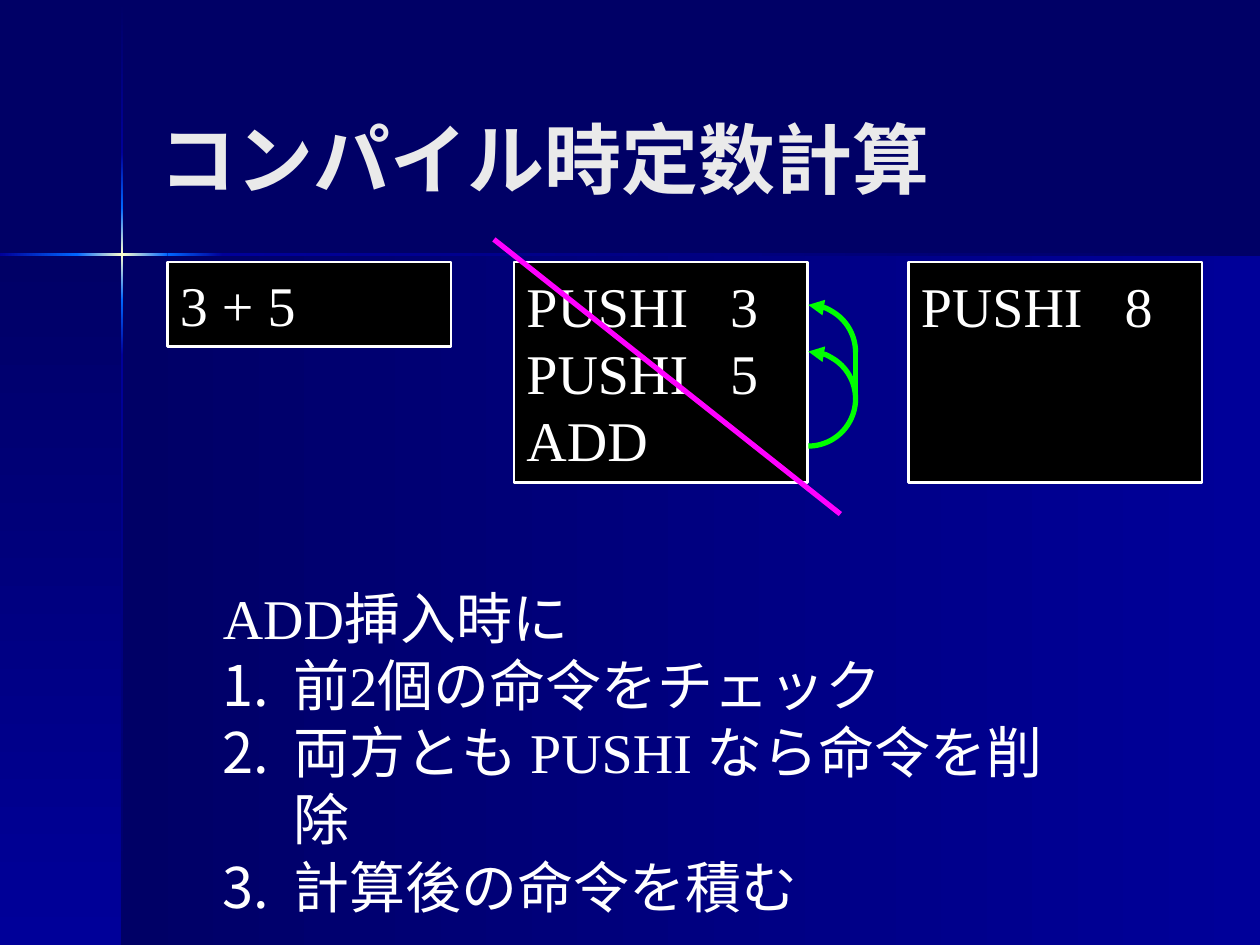
from lxml import etree
from pptx import Presentation
from pptx.dml.color import RGBColor
from pptx.enum.shapes import MSO_CONNECTOR, MSO_SHAPE
from pptx.enum.text import MSO_ANCHOR
from pptx.oxml import parse_xml
from pptx.oxml.ns import nsdecls, qn
from pptx.util import Inches, Pt

RECT, ARC = MSO_SHAPE.RECTANGLE, MSO_SHAPE.ARC
STRAIGHT = MSO_CONNECTOR.STRAIGHT
TOP, MIDDLE, BOTTOM = MSO_ANCHOR.TOP, MSO_ANCHOR.MIDDLE, MSO_ANCHOR.BOTTOM
FONT = "Times New Roman"
NAVY, BLUE, BRIGHT, CREAM = "000066", "000099", "0066FF", "FFFFCC"
WHITE, BLACK, GREEN, MAGENTA = "FFFFFF", "000000", "00FF00", "FF00FF"

# Content
TITLE = "コンパイル時定数計算"
CODE_BOXES = [  # left, width, height, lines
    (1.33, 2.25, 0.67, ["3 + 5"]),
    (4.08, 2.33, 1.75, ["PUSHI   3", "PUSHI   5", "ADD"]),
    (7.21, 2.33, 1.75, ["PUSHI   8", "", ""]),
]
CODE_TOP = 2.08
INTRO = "ADD挿入時に"
STEPS = ["前2個の命令をチェック", "両方とも PUSHI なら命令を削除", "計算後の命令を積む"]
PANELS = [  # left, top, width, height, angle
    (0.97, 2.02, 9.03, 5.48, 0),
    (0, 2.02, 0.97, 5.48, 90),
]
# Glowing cross: edges along each bar and the colours between them
BAR_X, BAR_Y, BAR = 0.96, 2.01, 0.02
V_EDGES = [0.01, 1.21, 1.65, 2.38, 2.82, 7.5]
V_COLORS = [(NAVY, BLUE), (BLUE, BRIGHT), (BRIGHT, CREAM, BRIGHT), (BRIGHT, BLUE), (BLUE, NAVY)]
H_EDGES = [0, 0.61, 1.33, 1.77, 10]
H_COLORS = [(BLUE, BRIGHT), (BRIGHT, CREAM, BRIGHT), (BRIGHT, BLUE), (BLUE, NAVY)]
ARCS = [(2.42, 0, True), (2.79, 0, True), (2.79, 90, False)]  # top, rotation, arrow
ARC_LEFT, ARC_SIZE = 6.04, 0.75


def rgb(value):
    return RGBColor.from_string(value)


def add_shape(kind, x, y, w, h):
    sp = s.shapes.add_shape(kind, Inches(x), Inches(y), Inches(w), Inches(h))
    sp.shadow.inherit = False
    return sp


def set_line(sp, color, width):
    sp.line.color.rgb = rgb(color)
    sp.line.width = Pt(width)


def gradient_rect(x, y, w, h, colors, angle):
    sp = add_shape(RECT, x, y, w, h)
    sp.line.fill.background()
    step = 100000 // (len(colors) - 1)
    stops = "".join(f'<a:gs pos="{i * step}"><a:srgbClr val="{c}"/></a:gs>'
                    for i, c in enumerate(colors))
    grad = parse_xml(f'<a:gradFill {nsdecls("a")}><a:gsLst>{stops}</a:gsLst>'
                     f'<a:lin ang="{angle * 60000}" scaled="0"/></a:gradFill>')
    sp._element.spPr.find(qn("a:prstGeom")).addnext(grad)


def add_line(x1, y1, x2, y2, color):
    cn = s.shapes.add_connector(STRAIGHT, Inches(x1), Inches(y1), Inches(x2), Inches(y2))
    set_line(cn, color, 3)
    etree.SubElement(cn._element.spPr, qn("a:effectLst"))


def write(tf, lines, size=32, color=WHITE, bold=False, anchor=TOP, wrap=True):
    tf.word_wrap = wrap
    tf.vertical_anchor = anchor
    for i, text in enumerate(lines):
        p = tf.paragraphs[0] if i == 0 else tf.add_paragraph()
        p.alignment = 1
        p.font.size = Pt(size)
        if text:
            r = p.add_run()
            r.text = text
            r.font.name, r.font.size, r.font.bold = FONT, Pt(size), bold
            r.font.color.rgb = rgb(color)
        else:
            end = etree.SubElement(p._p, qn("a:endParaRPr"))
            end.set("sz", str(size * 100))


def add_text(x, y, w, h, lines, **fmt):
    tf = s.shapes.add_textbox(Inches(x), Inches(y), Inches(w), Inches(h)).text_frame
    write(tf, lines, **fmt)
    return tf


def number(p, indent):
    pPr = p._p.get_or_add_pPr()
    pPr.set("marL", str(Inches(indent)))
    pPr.set("indent", str(-Inches(indent)))
    bullet = parse_xml(f'<a:buAutoNum {nsdecls("a")} type="arabicPeriod"/>')
    pPr.insert(0, bullet)


prs = Presentation()
prs.slide_width, prs.slide_height = Inches(10), Inches(7.5)
s = prs.slides.add_slide(prs.slide_layouts[6])
s.background.fill.solid()
s.background.fill.fore_color.rgb = rgb(NAVY)

# Backdrop panels and cross
for x, y, w, h, angle in PANELS:
    gradient_rect(x, y, w, h, (NAVY, BLUE), angle)
for a, b, colors in zip(V_EDGES, V_EDGES[1:], V_COLORS):
    gradient_rect(BAR_X, a, BAR, b - a, colors, 90)
for a, b, colors in zip(H_EDGES, H_EDGES[1:], H_COLORS):
    gradient_rect(a, BAR_Y, b - a, BAR, colors, 0)

# Title
add_text(1.17, 0.1, 7.75, 1.57, [TITLE], size=44, color="EAEAEA", bold=True, anchor=BOTTOM)

# Code boxes
for x, w, h, lines in CODE_BOXES:
    sp = add_shape(RECT, x, CODE_TOP, w, h)
    sp.fill.solid()
    sp.fill.fore_color.rgb = rgb(BLACK)
    set_line(sp, WHITE, 1.5)
    write(sp.text_frame, lines, anchor=MIDDLE, wrap=False)

# Look-back arrows from ADD to both operands
for y, rotation, arrow in ARCS:
    sp = add_shape(ARC, ARC_LEFT, y, ARC_SIZE, ARC_SIZE)
    sp.fill.background()
    set_line(sp, GREEN, 3)
    sp.rotation = rotation
    if arrow:
        etree.SubElement(sp.line._get_or_add_ln(), qn("a:headEnd")).set("type", "triangle")
arc_right = ARC_LEFT + ARC_SIZE
add_line(arc_right, 2.79, arc_right, 3.17, GREEN)

# Steps
tf = add_text(1.67, 4.58, 6.84, 2.26, [INTRO] + STEPS)
for p in tf.paragraphs[1:]:
    number(p, 0.56)

# Strike-through of the replaced code
add_line(3.92, 1.9, 6.67, 4.08, MAGENTA)

prs.save("out.pptx")
